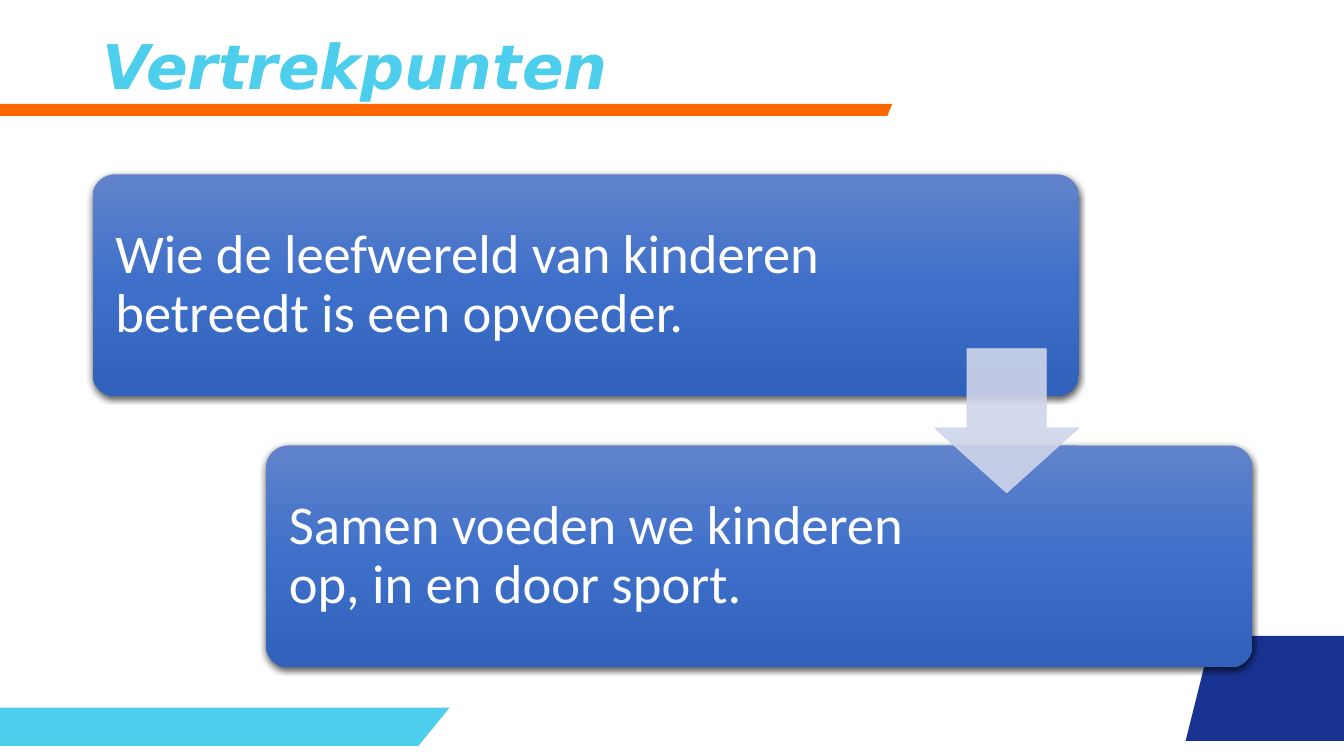
from lxml.etree import SubElement
from pptx import Presentation
from pptx.dml.color import RGBColor
from pptx.enum.shapes import MSO_SHAPE
from pptx.enum.text import MSO_ANCHOR, MSO_AUTO_SIZE, PP_ALIGN
from pptx.oxml import parse_xml
from pptx.oxml.ns import nsdecls, qn
from pptx.util import Inches, Pt

WIDTH, HEIGHT = 13.33, 7.5
LEFT, TOP = 0.92, 1.73
CARD_WIDTH, CARD_HEIGHT = 9.78, 2.2
STEP_X, STEP_Y = 1.72, 2.69
ARROW_SIZE = 1.43


def color(hex_code):
    return RGBColor.from_string(hex_code)


def write(shape, text, font="Calibri", size=39, ink="FFFFFF", bold=False,
          italic=False, margins=(0.1, 0.05, 0.1, 0.05)):
    frame = shape.text_frame
    frame.word_wrap = True
    frame.auto_size = MSO_AUTO_SIZE.NONE
    frame.vertical_anchor = MSO_ANCHOR.MIDDLE
    (frame.margin_left, frame.margin_top,
     frame.margin_right, frame.margin_bottom) = map(Inches, margins)
    paragraph = frame.paragraphs[0]
    paragraph.alignment = PP_ALIGN.LEFT
    paragraph.line_spacing = 0.9
    run = paragraph.add_run()
    run.text = text
    run.font.name, run.font.size = font, Pt(size)
    run.font.bold, run.font.italic = bold, italic
    run.font.color.rgb = color(ink)


presentation = Presentation()
presentation.slide_width, presentation.slide_height = Inches(WIDTH), Inches(HEIGHT)
slide = presentation.slides.add_slide(presentation.slide_layouts[5])

# Slanted bands, in hundredths of an inch: cyan, navy, and orange under the title
bands = [
    ("4CCEEC", [(0, 702), (446, 702), (415, 740), (0, 740)]),
    ("183291", [(1202, 631), (1333, 631), (1333, 735), (1176, 735)]),
    ("FF6600", [(0, 103), (885, 103), (880, 115), (0, 115)]),
]
for fill, points in bands:
    builder = slide.shapes.build_freeform(*points[0], scale=Inches(0.01))
    builder.add_line_segments(points[1:], close=True)
    band = builder.convert_to_shape()
    band.shadow.inherit = False
    band.fill.solid()
    band.fill.fore_color.rgb = color(fill)
    band.line.fill.background()

# Title
title = slide.shapes.title
title.left, title.top, title.width, title.height = map(Inches, (LEFT, 0.15, 11.5, 1.07))
write(title, "Vertrekpunten", font="DejaVu Sans", size=44, ink="4CCEEC",
      bold=True, italic=True)

# Staggered cards; the right margin keeps the text clear of the arrow
cards = [
    ("Wie de leefwereld van kinderen betreedt is een opvoeder.", 2.32),
    ("Samen voeden we kinderen op, in en door sport.", 3.32),
]
for index, (text, right_margin) in enumerate(cards):
    card = slide.shapes.add_shape(
        MSO_SHAPE.ROUNDED_RECTANGLE,
        Inches(LEFT + index * STEP_X), Inches(TOP + index * STEP_Y),
        Inches(CARD_WIDTH), Inches(CARD_HEIGHT))
    card.adjustments[0] = 0.1
    card.line.fill.background()
    card.fill.gradient()
    card.fill.gradient_angle = 270
    stops = card.element.spPr.find(qn("a:gradFill")).find(qn("a:gsLst"))
    for stop in list(stops):
        stops.remove(stop)
    for percent, shade in ((0, "6183CB"), (50, "3E70CA"), (100, "3062BB")):
        stop = SubElement(stops, qn("a:gs"), pos=str(percent * 1000))
        SubElement(stop, qn("a:srgbClr"), val=shade)
    card.shadow.inherit = False
    card.element.spPr.find(qn("a:effectLst")).append(parse_xml(
        f'<a:outerShdw {nsdecls("a")} blurRad="{Pt(4.5)}" dist="{Pt(1.5)}" '
        'dir="5400000" algn="ctr" rotWithShape="0"><a:srgbClr val="000000">'
        '<a:alpha val="63000"/></a:srgbClr></a:outerShdw>'))
    write(card, text, margins=(0.16, 0.16, right_margin, 0.16))

# Translucent arrow, flush with the first card and centred on the gap
gap_middle = TOP + (CARD_HEIGHT + STEP_Y) / 2
arrow = slide.shapes.add_shape(
    MSO_SHAPE.DOWN_ARROW,
    Inches(LEFT + CARD_WIDTH - ARROW_SIZE), Inches(gap_middle - ARROW_SIZE / 2),
    Inches(ARROW_SIZE), Inches(ARROW_SIZE))
arrow.adjustments[0], arrow.adjustments[1] = 0.55, 0.45
arrow.shadow.inherit = False
arrow.line.width = Pt(0.5)
for paint in (arrow.fill, arrow.line.fill):
    paint.solid()
    paint.fore_color.rgb = color("CFD5EA")
for shade in arrow.element.spPr.iter(qn("a:srgbClr")):
    SubElement(shade, qn("a:alpha"), val="90000")

presentation.save("out.pptx")
